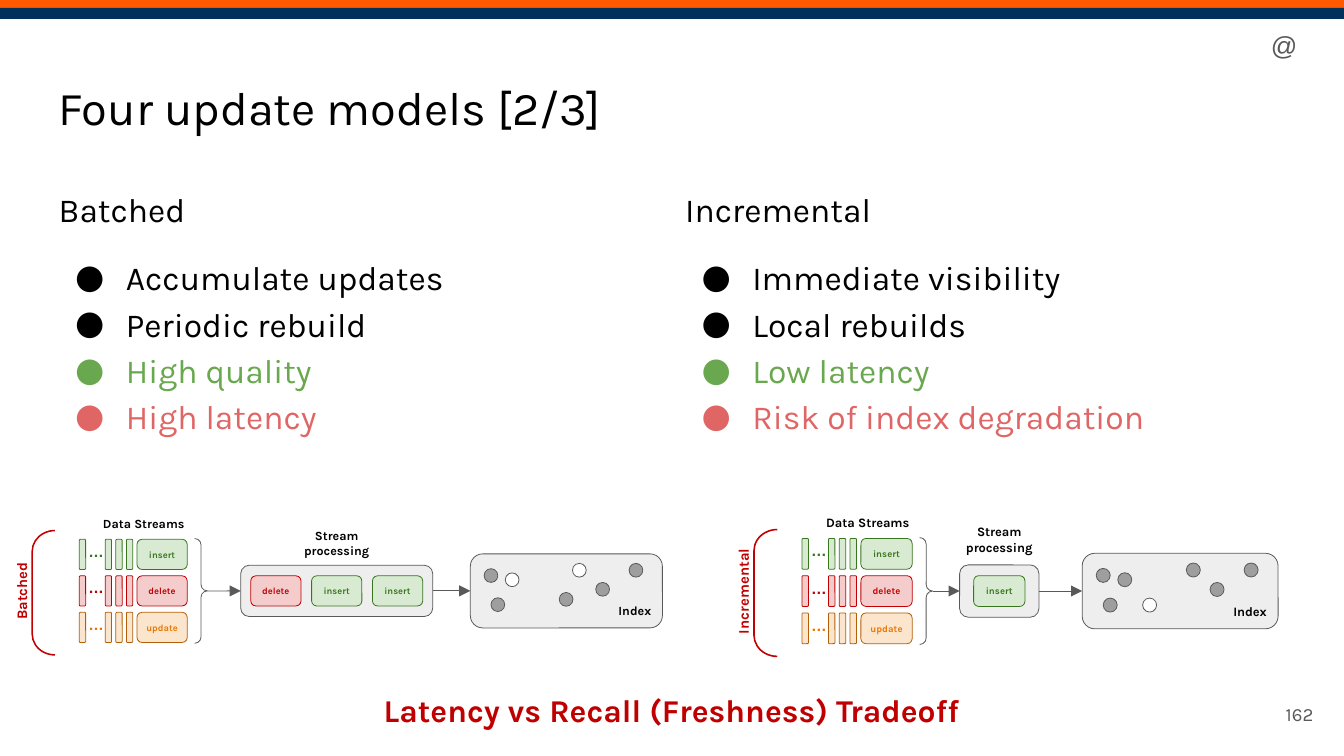
"""Build a slide comparing the batched and incremental update models."""
from dataclasses import dataclass
from typing import NamedTuple

from lxml.etree import SubElement
from pptx import Presentation
from pptx.dml.color import RGBColor
from pptx.enum.shapes import MSO_CONNECTOR as Line, MSO_SHAPE as Preset
from pptx.enum.text import MSO_ANCHOR as Anchor, PP_ALIGN as Align
from pptx.oxml.ns import qn
from pptx.util import Cm, Pt


@dataclass(frozen=True)
class Theme:
    font: str = "Karla"
    symbol_font: str = "Arial"
    orange: str = "FF5A00"
    navy: str = "00315B"
    black: str = "000000"
    gray: str = "595959"
    good: str = "6AA84F"
    bad: str = "E06666"
    red: str = "C00000"
    panel: str = "EEEEEE"
    dot: str = "9E9E9E"
    white: str = "FFFFFF"
    title: float = 25.2
    body: float = 18
    message: float = 17
    handle: float = 14
    number: float = 10
    side: float = 7.8
    caption: float = 6.7
    pill: float = 5
    ellipsis: float = 8.3
    thin: float = 0.42
    thick: float = 0.83


class Area(NamedTuple):
    left: float
    top: float
    width: float
    height: float


class Operation(NamedTuple):
    name: str
    fill: str
    line: str
    ink: str


class Column(NamedTuple):
    left: float
    heading: str
    points: tuple[str, ...]


@dataclass(frozen=True)
class Pipeline:
    label: str
    left: float
    top: float
    scale: float
    panel_left: float
    panel_width: float
    caption_top: float
    jobs: tuple[Operation, ...]
    index_left: float
    dots: tuple[tuple[float, float, str], ...]

    def place(self, left: float, top: float, width: float, height: float) -> Area:
        """Turn diagram lengths into slide lengths."""
        k = self.scale
        return Area(self.left + left * k, self.top + top * k, width * k, height * k)

    def size(self, points: float) -> float:
        """Scale a type size or line width."""
        return round(points * self.scale, 2)


THEME = Theme()
INSERT = Operation("insert", "D9EAD3", "38761D", "38761D")
DELETE = Operation("delete", "F4CCCC", "C00001", "C00001")
UPDATE = Operation("update", "FCE5CD", "B45F06", "EA7600")
MIDDLE = 1.14
ROW_PITCH = 0.69
JOB_PITCH = 1.15
PILL_WIDTH, PILL_HEIGHT = 0.95, 0.57
BAR_LEFTS = (0.89, 1.38, 1.58, 1.78)
INDEX_WIDTH, INDEX_HEIGHT = 3.63, 1.4
GRAY_DOTS = tuple((x, y, THEME.dot) for x, y in
                  ((0.26, 0.28), (3.0, 0.18), (2.37, 0.54), (0.39, 0.83)))

COLUMNS = (
    Column(0.86, "Batched", ("Accumulate updates", "Periodic rebuild",
                             "High quality", "High latency")),
    Column(12.7, "Incremental", ("Immediate visibility", "Local rebuilds",
                                 "Low latency", "Risk of index degradation")),
)
PIPELINES = (
    Pipeline("Batched", 0.61, 10.03, 1, 3.94, 3.63, -0.2, (DELETE, INSERT, INSERT), 8.28,
             GRAY_DOTS + ((1.93, 0.18, THEME.white), (0.66, 0.36, THEME.white),
                          (1.68, 0.73, THEME.dot))),
    Pipeline("Incremental", 14.25, 10.01, 1.02, 3.81, 1.47, -0.25, (INSERT,), 6.08,
             GRAY_DOTS + ((1.93, 0.18, THEME.dot), (0.66, 0.36, THEME.dot),
                          (1.12, 0.83, THEME.white))),
)


def write(frame, text: str, *, size: float, color: str = THEME.black, bold: bool = False,
          font: str = THEME.font, align=Align.LEFT, spacing: float = 1,
          before: float = 0, bullet: bool = False) -> None:
    """Append one formatted paragraph to a text frame."""
    para = frame.add_paragraph() if frame.text else frame.paragraphs[0]
    if bullet:
        props = para._p.get_or_add_pPr()
        props.set("marL", str(Cm(1.27)))
        props.set("indent", str(Cm(-0.96)))
        SubElement(SubElement(props, qn("a:buClr")), qn("a:srgbClr")).set("val", color)
        SubElement(props, qn("a:buFont")).set("typeface", font)
        SubElement(props, qn("a:buChar")).set("char", "●")
    para.alignment = align
    para.line_spacing = spacing
    para.space_before = Pt(before)
    span = para.add_run()
    span.text = text
    span.font.name = font
    span.font.size = Pt(size)
    span.font.bold = bold
    span.font.color.rgb = RGBColor.from_string(color)


def set_frame(frame, inset: float, anchor=Anchor.TOP, wrap: bool = True):
    """Set the margins, anchor and wrapping of a text frame."""
    frame.margin_left = frame.margin_right = Cm(inset)
    frame.margin_top = frame.margin_bottom = Cm(inset)
    frame.vertical_anchor = anchor
    frame.word_wrap = wrap
    return frame


def add_box(page, area: Area, inset: float = 0.25, anchor=Anchor.TOP,
            wrap: bool = True, rotation: float = 0):
    """Add a text box and return its frame."""
    box = page.shapes.add_textbox(*map(Cm, area))
    box.rotation = rotation
    return set_frame(box.text_frame, inset, anchor, wrap)


def add_shape(page, preset, area: Area, fill: str = "", line: str = "", width: float = 0):
    """Add a preset shape with an optional fill and outline."""
    shape = page.shapes.add_shape(preset, *map(Cm, area))
    shape.shadow.inherit = False
    for paint, color in ((shape.fill, fill), (shape.line.fill, line)):
        if color:
            paint.solid()
            paint.fore_color.rgb = RGBColor.from_string(color)
        else:
            paint.background()
    if line:
        shape.line.width = Pt(width)
    return shape


def add_arrow(page, flow: Pipeline, start: float, end: float, target, source=None) -> None:
    """Draw a horizontal arrow into the left side of the target."""
    area = flow.place(start, MIDDLE, end - start, 0)
    arrow = page.shapes.add_connector(Line.STRAIGHT, Cm(area.left), Cm(area.top),
                                      Cm(area.left + area.width), Cm(area.top))
    if source is not None:
        arrow.begin_connect(source, 3)
    arrow.end_connect(target, 1)
    arrow.line.color.rgb = RGBColor.from_string(THEME.gray)
    arrow.line.width = Pt(flow.size(THEME.thin))
    SubElement(arrow.line._get_or_add_ln(), qn("a:tailEnd")).set("type", "triangle")
    SubElement(arrow._element.spPr, qn("a:effectLst"))


def add_pill(page, flow: Pipeline, kind: Operation, left: float, top: float) -> None:
    """Draw a labelled operation."""
    pill = add_shape(page, Preset.ROUNDED_RECTANGLE, flow.place(left, top, PILL_WIDTH, PILL_HEIGHT),
                     kind.fill, kind.line, flow.size(THEME.thin))
    write(set_frame(pill.text_frame, 0.15, Anchor.MIDDLE, False), kind.name,
          size=flow.size(THEME.pill), color=kind.ink, bold=True, align=Align.CENTER)


def add_caption(page, flow: Pipeline, text: str, area: Area, wrap: bool = True) -> None:
    """Write a small bold caption inside a diagram."""
    write(add_box(page, area, 0.15, wrap=wrap), text, size=flow.size(THEME.caption),
          bold=True, align=Align.CENTER)


def add_stream(page, flow: Pipeline, kind: Operation, top: float) -> None:
    """Draw one row of queued operations."""
    for left in BAR_LEFTS:
        add_shape(page, Preset.ROUNDED_RECTANGLE, flow.place(left, top, 0.12, PILL_HEIGHT),
                  kind.fill, kind.line, flow.size(THEME.thin))
    add_pill(page, flow, kind, 1.98, top)
    write(add_box(page, flow.place(0.91, top - 0.1, 0.69, 0.64), 0.15), "…",
          size=flow.size(THEME.ellipsis), color=kind.ink, bold=True, font=THEME.symbol_font)


def add_pipeline(page, flow: Pipeline) -> None:
    """Draw a pipeline from data streams to index."""
    thin = flow.size(THEME.thin)
    write(add_box(page, flow.place(-1.73, MIDDLE - 0.34, 3, 0.69), 0.15, Anchor.MIDDLE, rotation=270),
          flow.label, size=flow.size(THEME.side), color=THEME.red, bold=True,
          align=Align.CENTER, spacing=1.15)
    bracket = add_shape(page, Preset.LEFT_BRACKET, flow.place(0, 0, 0.43, 2.35),
                        line=DELETE.line, width=flow.size(THEME.thick))
    bracket.adjustments[0] = 0.906
    add_caption(page, flow, "Data Streams", flow.place(1.17, -0.41, 1.88, 0.57), wrap=False)
    pill_top = MIDDLE - PILL_HEIGHT / 2
    for row, kind in enumerate((INSERT, DELETE, UPDATE), start=-1):
        add_stream(page, flow, kind, pill_top + row * ROW_PITCH)
    brace = add_shape(page, Preset.RIGHT_BRACE, flow.place(3.07, MIDDLE - 0.99, 0.24, 1.98),
                      line=THEME.gray, width=thin)
    brace.adjustments[0] = 0.5
    panel, index = (
        add_shape(page, Preset.ROUNDED_RECTANGLE,
                  flow.place(left, MIDDLE - height / 2, width, height), THEME.panel, THEME.gray, thin)
        for left, width, height in ((flow.panel_left, flow.panel_width, 0.97),
                                    (flow.index_left, INDEX_WIDTH, INDEX_HEIGHT)))
    add_arrow(page, flow, 3.31, flow.panel_left, panel)
    add_arrow(page, flow, flow.panel_left + flow.panel_width, flow.index_left, index, panel)
    center = flow.panel_left + flow.panel_width / 2
    add_caption(page, flow, "Stream processing", flow.place(center - 1.1, flow.caption_top, 2.2, 1.14))
    first = center - ((len(flow.jobs) - 1) * JOB_PITCH + PILL_WIDTH) / 2
    for number, kind in enumerate(flow.jobs):
        add_pill(page, flow, kind, first + number * JOB_PITCH, pill_top)
    index_top = MIDDLE - INDEX_HEIGHT / 2
    for x, y, fill in flow.dots:
        add_shape(page, Preset.OVAL, flow.place(flow.index_left + x, index_top + y, 0.26, 0.26),
                  fill, THEME.gray, thin)
    add_caption(page, flow, "Index", flow.place(flow.index_left + 2.46, index_top + 0.79, 1.3, 0.57))


def add_column(page, column: Column) -> None:
    """Write a heading with its bullet points."""
    frame = add_box(page, Area(column.left, 3.2, 11.84, 5.59))
    write(frame, column.heading, size=THEME.body, spacing=1.15)
    colors = (THEME.black, THEME.black, THEME.good, THEME.bad)
    for number, (point, color) in enumerate(zip(column.points, colors)):
        write(frame, point, size=THEME.body, color=color, spacing=1.15,
              before=0 if number else 12, bullet=True)


def main() -> None:
    """Build and save the deck."""
    deck = Presentation()
    deck.slide_width, deck.slide_height = Cm(25.4), Cm(14.29)
    page = deck.slides.add_slide(deck.slide_layouts[6])
    add_shape(page, Preset.RECTANGLE, Area(0, 0, 25.4, 0.15), THEME.orange)
    add_shape(page, Preset.RECTANGLE, Area(0, 0.15, 25.4, 0.21), THEME.navy)
    write(add_box(page, Area(23.77, 0.3, 0.97, 1.12)), "@", size=THEME.handle,
          color=THEME.gray, font=THEME.symbol_font)
    write(add_box(page, Area(0.86, 1.24, 23.67, 1.6)), "Four update models [2/3]", size=THEME.title)
    for column in COLUMNS:
        add_column(page, column)
    for flow in PIPELINES:
        add_pipeline(page, flow)
    write(add_box(page, Area(0.86, 12.7, 23.67, 1.59)), "Latency vs Recall (Freshness) Tradeoff",
          size=THEME.message, color=THEME.red, bold=True, align=Align.CENTER, spacing=1.15)
    write(add_box(page, Area(23.55, 12.95, 1.52, 1.09), anchor=Anchor.MIDDLE), "162",
          size=THEME.number, color=THEME.gray, align=Align.RIGHT)
    deck.save("out.pptx")


if __name__ == "__main__":
    main()
